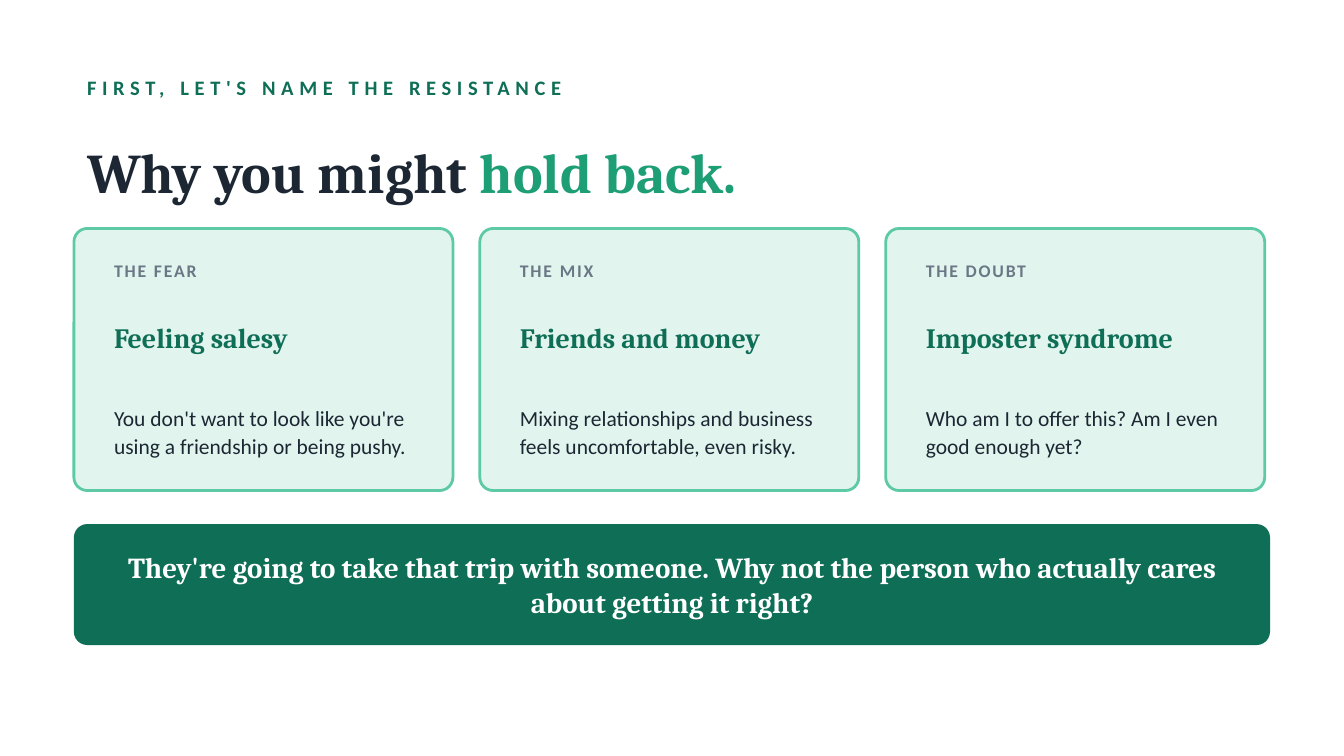
from pptx import Presentation
from pptx.dml.color import RGBColor
from pptx.enum.shapes import MSO_SHAPE as Preset
from pptx.enum.text import MSO_ANCHOR as Anchor, MSO_AUTO_SIZE as AutoSize, PP_ALIGN as Align
from pptx.util import Pt

COLORS = {
    "ink": "1C2733",
    "muted": "6B7785",
    "deep": "0F6E56",
    "accent": "1D9E75",
    "mint": "E1F5EE",
    "edge": "5DCAA5",
    "white": "FFFFFF",
}
SANS, SERIF = "Calibri", "Cambria"
MARGIN, CONTENT_WIDTH = 39.6, 640.8
CARD_TOP, CARD_WIDTH, CARD_HEIGHT, CARD_PITCH = 122.4, 203.04, 140.4, 217.44
CARD_PADDING, CARD_TEXT_WIDTH = 14.4, 176.4
BANNER_TOP, BANNER_HEIGHT, BANNER_PADDING = 280.8, 64.8, 18
CORNER_RADIUS = 7.2
CARDS = [
    ("THE FEAR", "Feeling salesy",
     "You don't want to look like you're using a friendship or being pushy."),
    ("THE MIX", "Friends and money",
     "Mixing relationships and business feels uncomfortable, even risky."),
    ("THE DOUBT", "Imposter syndrome",
     "Who am I to offer this? Am I even good enough yet?"),
]


def color(key):
    """Return the palette colour for a key."""
    return RGBColor.from_string(COLORS[key])


def add_run(paragraph, words, size, font, ink, bold=True, tracking=0):
    """Append one formatted run, with letter spacing in points."""
    run = paragraph.add_run()
    run.text = words
    run.font.size = Pt(size)
    run.font.name = font
    run.font.bold = bold
    run.font.color.rgb = color(ink)
    if tracking:
        run._r.get_or_add_rPr().set("spc", str(tracking * 100))


def prepare_frame(holder, align=Align.LEFT):
    """Set wrapping and middle anchoring, and return the first paragraph."""
    frame = holder.text_frame
    frame.word_wrap = True
    frame.auto_size = AutoSize.NONE
    frame.vertical_anchor = Anchor.MIDDLE
    frame.paragraphs[0].alignment = align
    return frame.paragraphs[0]


def add_label(slide, left, top, width, height, align=Align.LEFT):
    """Add a text box and return its first paragraph."""
    label = slide.shapes.add_textbox(Pt(left), Pt(top), Pt(width), Pt(height))
    return prepare_frame(label, align)


def add_panel(slide, left, top, width, height, fill, edge=None):
    """Add a rounded panel with an optional outline."""
    panel = slide.shapes.add_shape(
        Preset.ROUNDED_RECTANGLE, Pt(left), Pt(top), Pt(width), Pt(height))
    panel.shadow.inherit = False
    panel.adjustments[0] = CORNER_RADIUS / min(width, height) if edge is None else 0.051
    panel.fill.solid()
    panel.fill.fore_color.rgb = color(fill)
    if edge:
        panel.line.color.rgb = color(edge)
        panel.line.width = Pt(1.5)
    else:
        panel.line.fill.background()


def add_heading(slide):
    """Place the kicker line and the two-colour title."""
    kicker = add_label(slide, MARGIN, 36, CONTENT_WIDTH, 21.6)
    add_run(kicker, "FIRST, LET'S NAME THE RESISTANCE", 11, SANS, "deep", tracking=3)
    title = slide.shapes.title
    title.left, title.top = Pt(MARGIN), Pt(61.2)
    title.width, title.height = Pt(CONTENT_WIDTH), Pt(61.2)
    headline = prepare_frame(title)
    add_run(headline, "Why you might ", 30, SERIF, "ink")
    add_run(headline, "hold back.", 30, SERIF, "accent")


def add_card(slide, left, category, worry, detail):
    """Add one card with its category, worry and detail."""
    add_panel(slide, left, CARD_TOP, CARD_WIDTH, CARD_HEIGHT, "mint", "edge")
    text_left = left + CARD_PADDING
    category_line = add_label(slide, text_left, 133.92, CARD_TEXT_WIDTH, 21.6)
    add_run(category_line, category, 9.5, SANS, "muted", tracking=1)
    worry_line = add_label(slide, text_left, 155.52, CARD_TEXT_WIDTH, 50.4)
    add_run(worry_line, worry, 15, SERIF, "deep")
    detail_lines = add_label(slide, text_left, 207.36, CARD_TEXT_WIDTH, 46.8)
    detail_lines.line_spacing = 1.08
    add_run(detail_lines, detail, 11.5, SANS, "ink", bold=False)


def add_banner(slide, message):
    """Add the closing banner with its centred message."""
    add_panel(slide, MARGIN, BANNER_TOP, CONTENT_WIDTH, BANNER_HEIGHT, "deep")
    closing = add_label(slide, MARGIN + BANNER_PADDING, BANNER_TOP,
                        CONTENT_WIDTH - 2 * BANNER_PADDING, BANNER_HEIGHT, Align.CENTER)
    add_run(closing, message, 15.5, SERIF, "white")


def main():
    """Build the slide and save it."""
    deck = Presentation()
    deck.slide_width, deck.slide_height = Pt(720), Pt(405)
    slide = deck.slides.add_slide(deck.slide_layouts[5])
    slide.background.fill.solid()
    slide.background.fill.fore_color.rgb = color("white")
    add_heading(slide)
    for column, card in enumerate(CARDS):
        add_card(slide, MARGIN + column * CARD_PITCH, *card)
    add_banner(slide, "They're going to take that trip with someone. "
                      "Why not the person who actually cares about getting it right?")
    deck.save("out.pptx")


if __name__ == "__main__":
    main()
